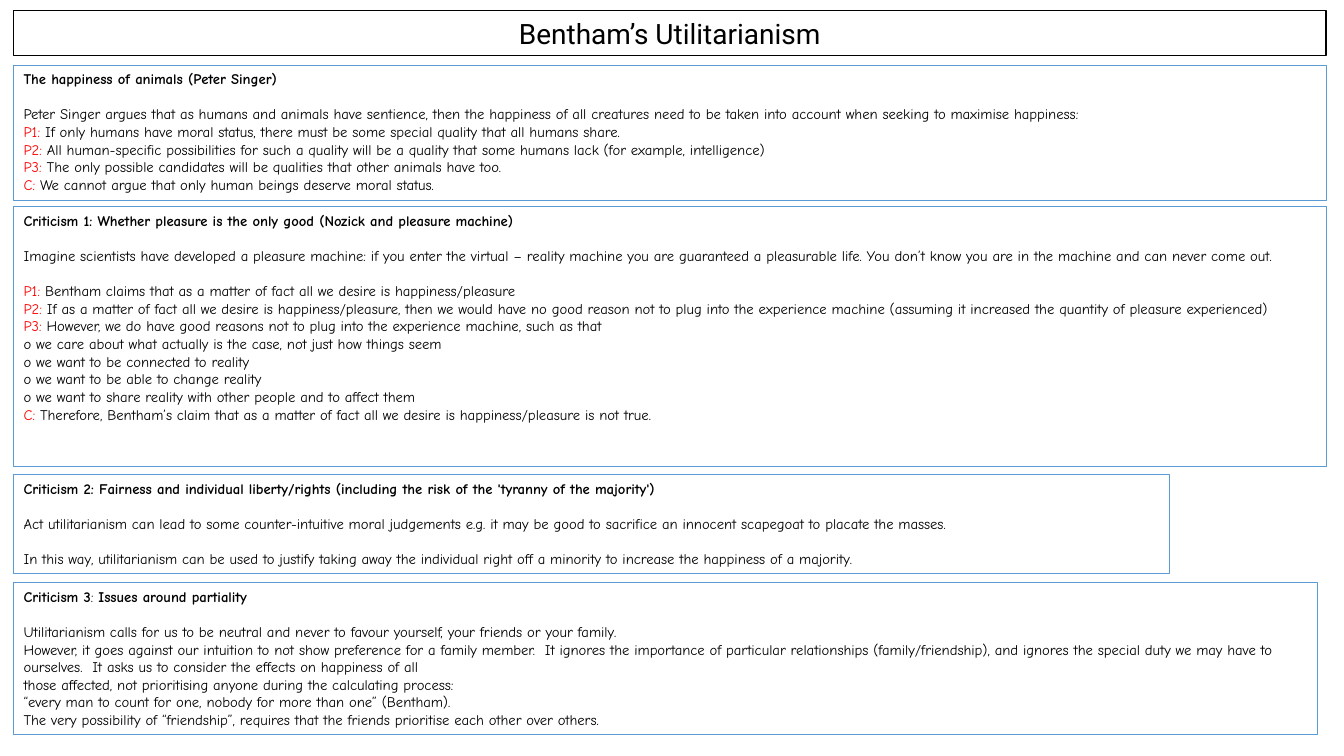
from lxml.etree import SubElement
from pptx import Presentation
from pptx.dml.color import RGBColor
from pptx.enum.shapes import MSO_SHAPE
from pptx.enum.text import MSO_ANCHOR, PP_ALIGN
from pptx.util import Pt

PX = 9525  # EMU per px, slide of 1280 by 720 px
BLACK = RGBColor(0x00, 0x00, 0x00)
WHITE = RGBColor(0xFF, 0xFF, 0xFF)
RED = RGBColor(0xFF, 0x00, 0x00)
BLUE = RGBColor(0x5B, 0x9B, 0xD5)
LEFT = 13
BLANK_LINE = Pt(12.5)

# A section is a box, a heading and blocks of lines; blocks stand one line apart.
# A line is a text or a pair of red label and text.
# A heading is a list of (text, bold).
SECTIONS = [
    ((LEFT, 62, 1250, 129),
     [("The happiness of animals (Peter Singer)", True)],
     [["Peter Singer argues that as humans and animals have sentience, then the happiness of all creatures need to be taken into account when seeking to maximise happiness:",
       ("P1:", " If only humans have moral status, there must be some special quality that all humans share."),
       ("P2:", " All human-specific possibilities for such a quality will be a quality that some humans lack (for example, intelligence)"),
       ("P3:", " The only possible candidates will be qualities that other animals have too."),
       ("C:", " We cannot argue that only human beings deserve moral status.")]]),
    ((LEFT, 197, 1250, 247),
     [("Criticism 1: Whether pleasure is the only good (Nozick and pleasure machine)", True)],
     [["Imagine scientists have developed a pleasure machine: if you enter the virtual – reality machine you are guaranteed a pleasurable life. You don’t know you are in the machine and can never come out."],
      [("P1:", " Bentham claims that as a matter of fact all we desire is happiness/pleasure"),
       ("P2:", " If as a matter of fact all we desire is happiness/pleasure, then we would have no good reason not to plug into the experience machine (assuming it increased the quantity of pleasure experienced)"),
       ("P3:", " However, we do have good reasons not to plug into the experience machine, such as that"),
       "o we care about what actually is the case, not just how things seem",
       "o we want to be connected to reality",
       "o we want to be able to change reality",
       "o we want to share reality with other people and to affect them",
       ("C:", " Therefore, Bentham’s claim that as a matter of fact all we desire is happiness/pleasure is not true.")]]),
    ((LEFT, 452, 1101, 94),
     [("Criticism 2: Fairness and individual liberty/rights (including the risk of the 'tyranny of the majority')", True)],
     [["Act utilitarianism can lead to some counter-intuitive moral judgements e.g. it may be good to sacrifice an innocent scapegoat to placate the masses."],
      ["In this way, utilitarianism can be used to justify taking away the individual right off a minority to increase the happiness of a majority."]]),
    ((LEFT, 555, 1242, 145),
     [("Criticism 3", True), (": ", False), ("Issues around partiality", True)],
     [["Utilitarianism calls for us to be neutral and never to favour yourself, your friends or your family.",
       "However, it goes against our intuition to not show preference for a family member.  It ignores the importance of particular relationships (family/friendship), and ignores the special duty we may have to ourselves.  It asks us to consider the effects on happiness of all",
       "those affected, not prioritising anyone during the calculating process:",
       "“every man to count for one, nobody for more than one” (Bentham).",
       "The very possibility of “friendship”, requires that the friends prioritise each other over others."]]),
]


def add_text(paragraph, text, font="Comic Neue", size=10.5, color=BLACK, bold=False):
    run = paragraph.add_run()
    run.text = text
    run.font.name = font
    run.font.size = Pt(size)
    run.font.color.rgb = color
    run.font.bold = bold
    # Same typeface for characters outside the Latin range
    for tag in ("ea", "cs"):
        SubElement(run.font._element, "{http://schemas.openxmlformats.org/drawingml/2006/main}" + tag,
                   typeface=font)


def add_box(slide, box, line_color, line_width, fill=None, anchor=MSO_ANCHOR.TOP):
    """Add an outlined rectangle and return its text frame."""
    shape = slide.shapes.add_shape(MSO_SHAPE.RECTANGLE, *(length * PX for length in box))
    shape.shadow.inherit = False
    if fill is None:
        shape.fill.background()
    else:
        shape.fill.solid()
        shape.fill.fore_color.rgb = fill
    shape.line.color.rgb = line_color
    shape.line.width = Pt(line_width)
    frame = shape.text_frame
    frame.word_wrap = True
    frame.vertical_anchor = anchor
    return frame


def add_title(slide, box, title):
    frame = add_box(slide, box, BLACK, 1, fill=WHITE, anchor=MSO_ANCHOR.MIDDLE)
    paragraph = frame.paragraphs[0]
    paragraph.alignment = PP_ALIGN.CENTER
    add_text(paragraph, title, font="Roboto", size=20)


def add_section(slide, box, heading, blocks):
    frame = add_box(slide, box, BLUE, 0.75)
    paragraph = frame.paragraphs[0]
    paragraph.alignment = PP_ALIGN.LEFT
    for text, bold in heading:
        add_text(paragraph, text, bold=bold)
    for block in blocks:
        for index, line in enumerate(block):
            paragraph = frame.add_paragraph()
            paragraph.alignment = PP_ALIGN.LEFT
            if index == 0:
                paragraph.space_before = BLANK_LINE
            if isinstance(line, tuple):
                label, line = line
                add_text(paragraph, label, color=RED)
            add_text(paragraph, line)


def main():
    presentation = Presentation()
    presentation.slide_width = 1280 * PX
    presentation.slide_height = 720 * PX
    slide = presentation.slides.add_slide(presentation.slide_layouts[6])
    add_title(slide, (LEFT, 10, 1250, 43), "Bentham’s Utilitarianism")
    for box, heading, blocks in SECTIONS:
        add_section(slide, box, heading, blocks)
    presentation.save("out.pptx")


if __name__ == "__main__":
    main()
